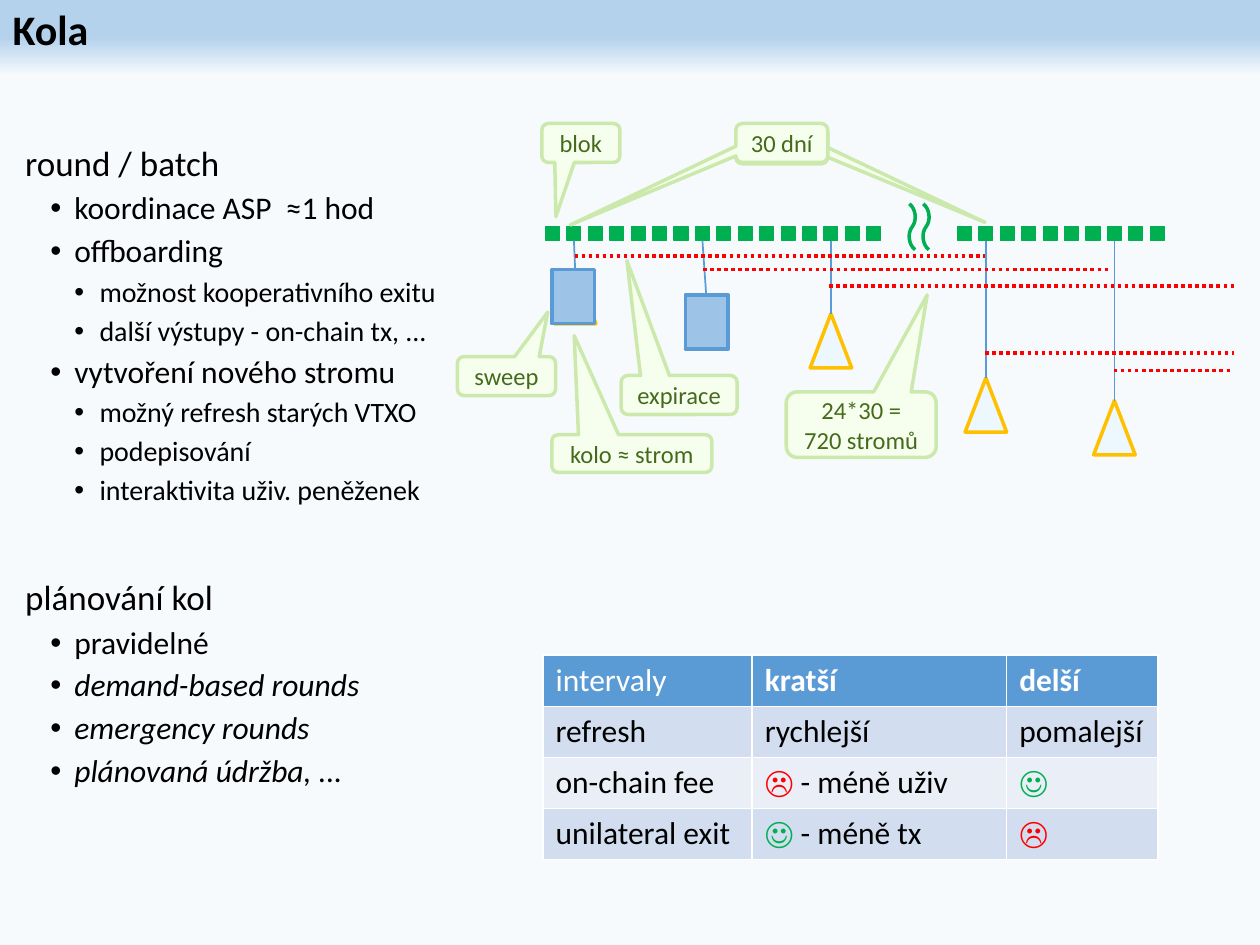
from copy import deepcopy

from lxml import etree
from pptx import Presentation
from pptx.dml.color import RGBColor
from pptx.enum import dml, shapes, text
from pptx.oxml import ns
from pptx.util import Inches, Pt


class Theme:
    font = "Calibri"
    black, white = "000000", "FFFFFF"
    sky, pale = "B5D2EC", "F7FAFD"
    green, red, gold = "00B050", "FF0000", "FFC000"
    blue, light_blue, ice = "5B9BD5", "9DC3E6", "ECF7FE"
    note_fill, note_line, note_text = "F6FFED", "CCE9AD", "456A1C"
    band_dark, band_light = "D2DEEF", "EAEFF7"
    title_size, note_size, table_size = 24, 14, 18
    level_sizes = (20, 18, 16)


def add_shape(kind, left, top, width, height, fill, line, weight):
    shape = slide.shapes.add_shape(kind, *map(Inches, (left, top, width, height)))
    shape.shadow.inherit = False
    shape.fill.solid()
    shape.fill.fore_color.rgb = RGBColor.from_string(fill)
    shape.line.color.rgb = RGBColor.from_string(line)
    shape.line.width = Pt(weight)
    return shape


def add_line(kind, x1, y1, x2, y2, color, weight):
    line = slide.shapes.add_connector(kind, *map(Inches, (x1, y1, x2, y2)))
    line.line.color.rgb = RGBColor.from_string(color)
    line.line.width = Pt(weight)
    etree.SubElement(line._element.spPr, ns.qn("a:effectLst"))
    return line


deck = Presentation()
deck.slide_width, deck.slide_height = Inches(10), Inches(7.5)
slide = deck.slides.add_slide(deck.slide_layouts[1])

# Background: a blue band fading out below the title
background = slide.background.fill
background.gradient()
background.gradient_angle = 270
stop_list = slide._element.find(".//" + ns.qn("a:gsLst"))
stop_list.append(deepcopy(stop_list[-1]))
stops = ((0, Theme.sky), (0.04, Theme.sky), (0.08, Theme.pale))
for stop, (position, color) in zip(background.gradient_stops, stops):
    stop.position = position
    stop.color.rgb = RGBColor.from_string(color)

# Title
title = slide.shapes.title
title.left, title.top, title.width, title.height = map(Inches, (0, 0, 10, 0.51))
title.text_frame.text = "Kola"
title.text_frame.vertical_anchor = text.MSO_ANCHOR.MIDDLE
title.text_frame.auto_size = text.MSO_AUTO_SIZE.NONE
heading = title.text_frame.paragraphs[0]
heading.alignment = text.PP_ALIGN.LEFT
heading.line_spacing = 0.9
heading.font.name, heading.font.size, heading.font.bold = Theme.font, Pt(Theme.title_size), True
heading.font.color.rgb = RGBColor.from_string(Theme.black)

# Outline: level, text, space before, italic
outline = [
    (0, "round / batch", 0, False),
    (1, "koordinace ASP  ≈1 hod", 5, False),
    (1, "offboarding", 5, False),
    (2, "možnost kooperativního exitu", 5, False),
    (2, "další výstupy - on-chain tx, ...", 5, False),
    (1, "vytvoření nového stromu", 5, False),
    (2, "možný refresh starých VTXO", 5, False),
    (2, "podepisování", 5, False),
    (2, "interaktivita uživ. peněženek", 5, False),
    (0, "plánování kol", 42, False),
    (1, "pravidelné", 5, False),
    (1, "demand-based rounds", 5, True),
    (1, "emergency rounds", 5, True),
    (1, "plánovaná údržba, ...", 5, True),
]
indents = ((0, 0), (0.39, -0.19), (0.59, -0.2))
body = slide.placeholders[1]
body.left, body.top, body.width, body.height = map(Inches, (0.1, 1.11, 9.81, 6.31))
body.text_frame.auto_size = text.MSO_AUTO_SIZE.NONE
body.text_frame.text = "\n".join(item[1] for item in outline)
for para, (level, _, space, italic) in zip(body.text_frame.paragraphs, outline):
    para.level = level
    para.line_spacing, para.space_before = 0.9, Pt(space)
    para.font.name, para.font.size = Theme.font, Pt(Theme.level_sizes[level])
    para.font.italic = italic
    para.font.color.rgb = RGBColor.from_string(Theme.black)
    properties = para._p.get_or_add_pPr()
    margin, indent = indents[level]
    properties.set("marL", str(Inches(margin)))
    properties.set("indent", str(Inches(indent)))
    bullet = etree.Element(ns.qn("a:buChar" if level else "a:buNone"))
    if level:
        bullet.set("char", "•")
    properties.find(ns.qn("a:defRPr")).addprevious(bullet)

# Table: each cell is a list of (text, colour, bold) runs
sad, smile = ("☹", Theme.red, True), ("☺", Theme.green, True)
rows = [
    [[("intervaly", Theme.white, False)], [("kratší", Theme.white, True)],
     [("delší", Theme.white, True)]],
    [[(word, Theme.black, False)] for word in ("refresh", "rychlejší", "pomalejší")],
    [[("on-chain fee", Theme.black, False)],
     [sad, (" - méně uživ", Theme.black, False)], [smile]],
    [[("unilateral exit", Theme.black, False)],
     [smile, (" - méně tx", Theme.black, False)], [sad]],
]
row_fills = (Theme.blue, Theme.band_dark, Theme.band_light, Theme.band_dark)
table = slide.shapes.add_table(4, 3, *map(Inches, (4.31, 5.2, 4.88, 1.6))).table
for column, width in zip(table.columns, (1.66, 2.02, 1.2)):
    column.width = Inches(width)
for row, cells, fill in zip(table.rows, rows, row_fills):
    for cell, runs in zip(row.cells, cells):
        cell.fill.solid()
        cell.fill.fore_color.rgb = RGBColor.from_string(fill)
        for words, color, bold in runs:
            span = cell.text_frame.paragraphs[0].add_run()
            span.text = words
            span.font.name, span.font.size, span.font.bold = Theme.font, Pt(Theme.table_size), bold
            span.font.color.rgb = RGBColor.from_string(color)

# Block chain, with a break after the first 16 blocks
blocks = []
for start, count in ((4.33, 16), (7.6, 10)):
    for index in range(count):
        blocks.append(add_shape(shapes.MSO_SHAPE.RECTANGLE, start + 0.17 * index, 1.8,
                                0.11, 0.11, Theme.green, Theme.green, 0))
for left in (7.11, 7.22):
    wave = add_line(shapes.MSO_CONNECTOR.CURVE, left, 1.67, left + 0.26, 1.93, Theme.green, 2)
    wave._element.spPr.find(ns.qn("a:xfrm")).set("rot", str(38 * 60000))

# Trees hanging from their blocks: block index, left, top
trees = ((1, 4.4, 2.14), (7, 5.44, 2.34), (13, 6.43, 2.49), (17, 7.66, 3), (23, 8.68, 3.18))
for index, left, top in trees:
    tree = add_shape(shapes.MSO_SHAPE.ISOSCELES_TRIANGLE, left, top, 0.33, 0.43,
                     Theme.ice, Theme.gold, 2)
    stem = add_line(shapes.MSO_CONNECTOR.STRAIGHT, left, top, left, 1.91, Theme.blue, 1)
    stem.begin_connect(tree, 0)
    stem.end_connect(blocks[index], 2)

# Expiry spans
for start, end, height in ((4.56, 7.82, 2.03), (5.58, 8.79, 2.14), (6.58, 9.79, 2.27),
                           (7.82, 9.79, 2.8), (8.84, 9.79, 2.94)):
    expiry = add_line(shapes.MSO_CONNECTOR.STRAIGHT, start, height, end, height, Theme.red, 2)
    expiry.line.dash_style = dml.MSO_LINE.ROUND_DOT

# Swept trees
for left, top in ((4.38, 2.14), (5.44, 2.34)):
    add_shape(shapes.MSO_SHAPE.RECTANGLE, left, top, 0.34, 0.43, Theme.light_blue, Theme.blue, 2)

# Callouts: label, box, pointer offset
callouts = [
    ("blok", (4.3, 0.98, 0.62, 0.31), (-0.32, 1.89)),
    ("kolo ≈ strom", (4.38, 3.45, 1.27, 0.3), (-0.36, -3.12)),
    ("30 dní", (5.84, 0.99, 0.73, 0.31), (2.21, 2)),
    ("expirace", (4.93, 2.98, 0.92, 0.31), (-0.45, -3.44)),
    ("24*30 = 720 stromů", (6.24, 3.11, 1.19, 0.52), (0.44, -1.98)),
    ("30 dní", (5.84, 0.98, 0.73, 0.31), (-2.3, 2.1)),
    ("sweep", (3.63, 2.83, 0.78, 0.31), (0.42, -1.64)),
]
for label, box, (across, down) in callouts:
    callout = add_shape(shapes.MSO_SHAPE.ROUNDED_RECTANGULAR_CALLOUT, *box,
                        Theme.note_fill, Theme.note_line, 2)
    callout.adjustments[0], callout.adjustments[1] = across, down
    callout.text_frame.text = label
    callout.text_frame.word_wrap = len(label) > 12
    callout.text_frame.vertical_anchor = text.MSO_ANCHOR.MIDDLE
    para = callout.text_frame.paragraphs[0]
    para.alignment = text.PP_ALIGN.CENTER
    para.font.name, para.font.size = Theme.font, Pt(Theme.note_size)
    para.font.color.rgb = RGBColor.from_string(Theme.note_text)

deck.save("out.pptx")
